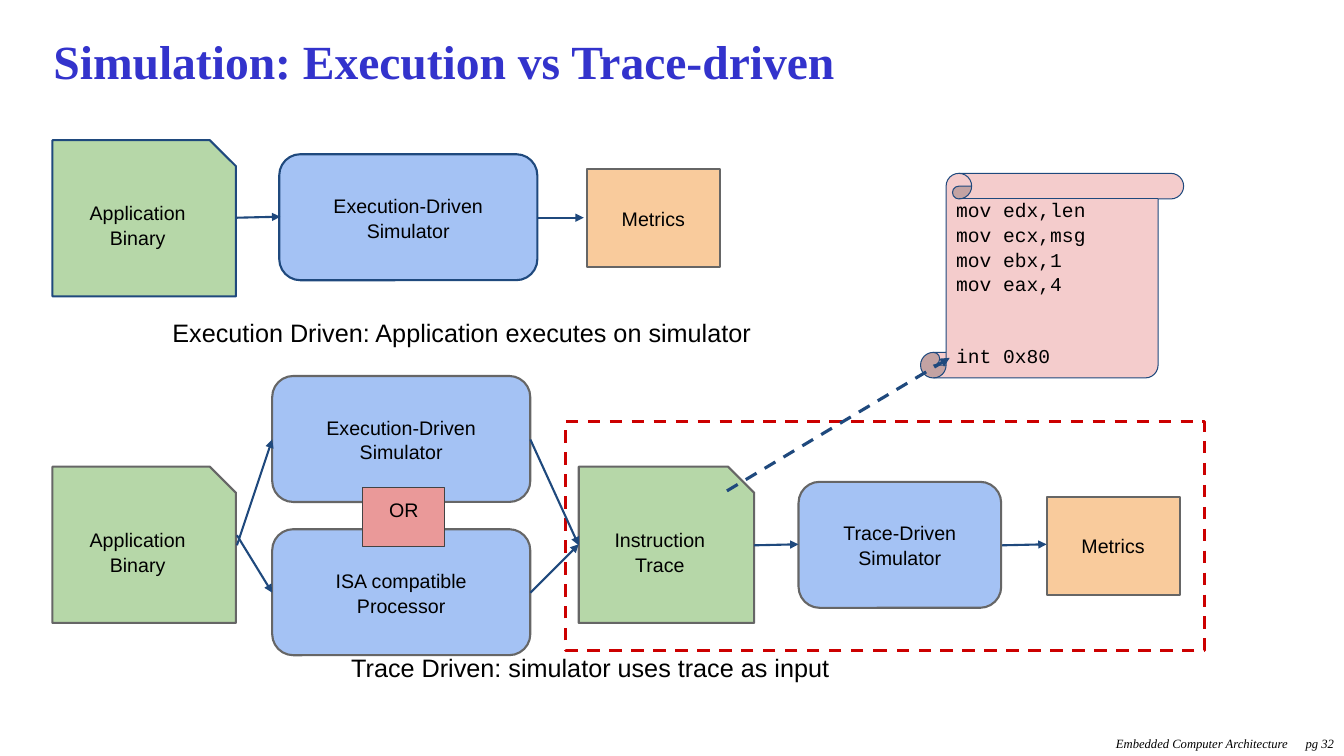
from pptx import Presentation, util as u
from pptx.dml.color import RGBColor
from pptx.enum import dml, shapes, text
from pptx.oxml.ns import qn
from lxml import etree

HUES = {"ink": "000000", "title": "3333CC", "navy": "1F497D", "gray": "666666",
        "dark": "434343", "green": "B6D7A8", "blue": "A4C2F4", "peach": "F9CB9C",
        "rose": "EA9999", "pink": "F4CCCC", "red": "CC0000"}
FORM = shapes.MSO_SHAPE
SIDE = text.PP_ALIGN
MID = text.MSO_ANCHOR.MIDDLE
TOP = text.MSO_ANCHOR.TOP


class Board:
    """Hold the style and the current slide, and draw each kind of element."""

    def __init__(self, deck):
        self.page = deck.slides.add_slide(deck.slide_layouts[5])
        self.items = self.page.shapes

    def hue(self, name):
        return RGBColor.from_string(HUES[name])

    def words(self, frame, lines, size=14, face="Arial", side=SIDE.CENTER,
              anchor=MID, pad=0.1, lead=None, tint="ink", bold=False, slant=False):
        frame.word_wrap = True
        frame.auto_size = text.MSO_AUTO_SIZE.NONE
        frame.vertical_anchor = anchor
        frame.margin_left = frame.margin_right = u.Inches(0.1)
        frame.margin_top = frame.margin_bottom = u.Inches(pad)
        for i, line in enumerate(lines):
            para = frame.add_paragraph() if i else frame.paragraphs[0]
            para.alignment = side
            para.line_spacing = lead
            run = para.add_run()
            run.text = line
            font = run.font
            font.size, font.name = u.Pt(size), face
            font.bold, font.italic = bold, slant
            font.color.rgb = self.hue(tint)

    def title(self, box, line):
        head = self.items.title
        head.left, head.top, head.width, head.height = map(u.Inches, box)
        self.words(head.text_frame, [line], 34, "Times New Roman", SIDE.LEFT,
                   pad=0.05, lead=0.8, tint="title", bold=True)

    def label(self, box, line, **style):
        note = self.items.add_textbox(*map(u.Inches, box))
        self.words(note.text_frame, [line], anchor=TOP, **style)

    def stroke(self, line, tint, width, dash):
        line.color.rgb = self.hue(tint)
        line.width = u.Pt(width)
        if dash:
            line.dash_style = dml.MSO_LINE.DASH

    def shape(self, form, box, fill=None, edge="gray", width=1.5, lines=(),
              bend=None, dash=False, **style):
        item = self.items.add_shape(form, *map(u.Inches, box))
        item.shadow.inherit = False
        if bend is not None:
            item.adjustments[0] = bend
        if fill:
            item.fill.solid()
            item.fill.fore_color.rgb = self.hue(fill)
        else:
            item.fill.background()
        self.stroke(item.line, edge, width, dash)
        self.words(item.text_frame, lines, **style)
        return item

    def sheet(self, x, y, width, lines, edge="gray"):
        self.shape(FORM.SNIP_1_RECTANGLE, (x, y, width, 1.55), "green", edge,
                   lines=lines, bend=0.167, lead=1.06)

    def stage(self, x, y, width, lines, edge="gray"):
        self.shape(FORM.ROUNDED_RECTANGLE, (x, y, width, 1.25), "blue", edge,
                   lines=lines, bend=0.167, lead=1.06)

    def result(self, x, y):
        self.shape(FORM.RECTANGLE, (x, y, 1.32, 0.97), "peach", lines=["Metrics"])

    def arrow(self, ends, width=1.5, dash=False):
        link = self.items.add_connector(shapes.MSO_CONNECTOR.STRAIGHT,
                                        *map(u.Inches, ends))
        self.stroke(link.line, "navy", width, dash)
        props = link.element.spPr
        tip = etree.SubElement(props.find(qn("a:ln")), qn("a:tailEnd"))
        tip.set("type", "triangle")
        etree.SubElement(props, qn("a:effectLst"))


def main():
    deck = Presentation()
    deck.slide_width, deck.slide_height = u.Inches(13.33), u.Inches(7.5)
    board = Board(deck)
    driven = ["Execution-Driven", "Simulator"]
    binary = ["Application Binary"]

    board.title((0.43, 0.25, 12.46, 0.8), "Simulation: Execution vs Trace-driven")
    for box, line in [((9.5, 7.25, 3.37, 0.25), "Embedded Computer Architecture"),
                      ((12.6, 7.25, 0.73, 0.25), "pg 32")]:
        board.label(box, line, size=9, face="Times New Roman", side=SIDE.RIGHT,
                    pad=0.05, slant=True)

    board.sheet(0.52, 4.63, 1.82, binary)
    board.stage(2.7, 3.73, 2.56, driven)
    board.result(10.38, 4.93)
    board.sheet(5.74, 4.63, 1.74, ["Instruction", "Trace"])
    board.stage(7.92, 4.78, 2.01, ["Trace-Driven", "Simulator"])

    board.sheet(0.52, 1.39, 1.82, binary, "navy")
    board.stage(2.77, 1.53, 2.56, driven, "navy")
    board.result(5.82, 1.68)

    board.label((0.45, 3.05, 8.26, 0.69),
                "Execution Driven: Application executes on simulator", size=18)
    board.label((0.52, 6.37, 10.67, 0.69),
                "Trace Driven: simulator uses trace as input", size=18)

    board.shape(FORM.RECTANGLE, (5.61, 4.18, 6.34, 2.27), edge="red", width=2.25,
                dash=True)
    code = ["mov edx,len", "mov ecx,msg", "mov ebx,1", "mov eax,4", "int 0x80"]
    scroll = board.shape(FORM.VERTICAL_SCROLL, (9.13, 1.72, 2.61, 2.03), "pink",
                         "navy", 0.75, code, bend=0.125, face="Courier New",
                         side=SIDE.LEFT, lead=1.06)
    scroll.text_frame.paragraphs[-1].space_before = u.Pt(33.6)

    board.stage(2.7, 5.25, 2.56, ["ISA compatible", "Processor"])
    for ends in [(2.35, 5.41, 2.7, 4.36), (5.26, 4.36, 5.74, 5.41),
                 (7.48, 5.41, 7.92, 5.4), (9.94, 5.41, 10.38, 5.4),
                 (2.35, 2.16, 2.78, 2.15), (5.33, 2.16, 5.79, 2.16),
                 (2.35, 5.31, 2.7, 5.88), (5.26, 5.88, 5.74, 5.4)]:
        board.arrow(ends)
    board.arrow((7.21, 4.87, 9.42, 3.55), 2.25, True)
    board.shape(FORM.RECTANGLE, (3.6, 4.84, 0.81, 0.58), "rose", "dark", 0.75,
                ["OR"], anchor=TOP)
    deck.save("out.pptx")


if __name__ == "__main__":
    main()
